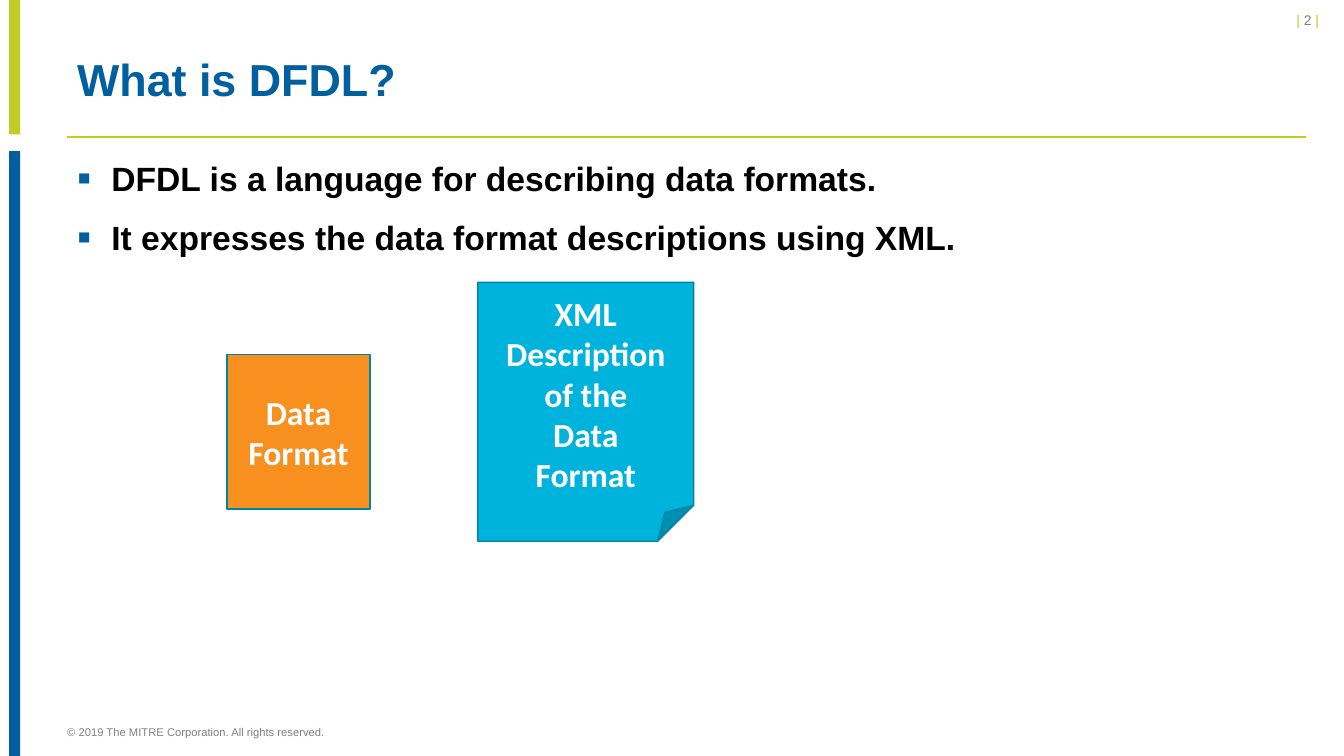
import pptx
import pptx.dml.color
import pptx.enum.shapes
import pptx.enum.text
import pptx.oxml
import pptx.oxml.ns
import pptx.util

RGBColor = pptx.dml.color.RGBColor
Pt = pptx.util.Pt
PP_ALIGN = pptx.enum.text.PP_ALIGN
MIDDLE = pptx.enum.text.MSO_ANCHOR.MIDDLE
SHAPES = pptx.enum.shapes.MSO_SHAPE

LIME = RGBColor(0xC1, 0xCD, 0x23)
BLUE = RGBColor(0x00, 0x5F, 0x9E)
GRAY = RGBColor(0x80, 0x80, 0x80)
BLACK = RGBColor(0x00, 0x00, 0x00)
WHITE = RGBColor(0xFF, 0xFF, 0xFF)
ORANGE = RGBColor(0xF7, 0x90, 0x1E)
CYAN = RGBColor(0x00, 0xB3, 0xDC)
TEAL = RGBColor(0x00, 0x84, 0xA3)

deck = pptx.Presentation()
deck.slide_width = pptx.util.Inches(13.33)
deck.slide_height = pptx.util.Inches(7.5)
slide = deck.slides.add_slide(deck.slide_layouts[6])

# The slide is a grid of 80 columns by 45 rows of square cells
CELL = deck.slide_height / 45
MARGIN, CONTENT_WIDTH = 4, 73.74


def grid(*cells):
    """Turn counts of grid cells into lengths."""
    return [pptx.util.Emu(round(count * CELL)) for count in cells]


def write(frame, paragraphs, paragraph_format, font_format, frame_format):
    """Fill a frame with paragraphs, each a list of (text, colour) runs."""
    for key, value in {"word_wrap": True, **frame_format}.items():
        setattr(frame, key, value)
    for index, runs in enumerate(paragraphs):
        paragraph = frame.add_paragraph() if index else frame.paragraphs[0]
        for key, value in paragraph_format.items():
            setattr(paragraph, key, value)
        for text, color in runs:
            run = paragraph.add_run()
            run.text = text
            run.font.color.rgb = color
            for key, value in font_format.items():
                setattr(run.font, key, value)


# Side bars and the rule under the title
for top, height, color in [(0, 8, LIME), (9, 36, BLUE)]:
    side_bar = slide.shapes.add_shape(SHAPES.RECTANGLE, *grid(0.54, top, 0.66, height))
    side_bar.shadow.inherit = False
    side_bar.fill.solid()
    side_bar.fill.fore_color.rgb = color
    side_bar.line.fill.background()

title_rule = slide.shapes.add_connector(
    pptx.enum.shapes.MSO_CONNECTOR.STRAIGHT,
    *grid(MARGIN, 8.16, MARGIN + CONTENT_WIDTH, 8.16))
title_rule.line.color.rgb = LIME
title_rule.line.width = Pt(1)
title_rule._element.spPr.append(pptx.oxml.parse_xml(
    f"<a:effectLst {pptx.oxml.ns.nsdecls('a')}/>"))

# Page number, title, statements and copyright line
NO_INSETS = dict.fromkeys(
    ["margin_left", "margin_top", "margin_right", "margin_bottom"], 0)
statements = ["DFDL is a language for describing data formats.",
              "It expresses the data format descriptions using XML."]
texts = [
    ((65.28, 0.42, 14.04, 1.62), [[("| ", LIME), ("2 ", GRAY), ("| ", LIME)]],
     {"alignment": PP_ALIGN.RIGHT, "space_after": Pt(6)},
     {"size": Pt(10)}, {}),
    ((MARGIN, 2.4, CONTENT_WIDTH, 4.92), [[("What is DFDL?", BLUE)]],
     {"line_spacing": 0.9},
     {"size": Pt(32), "bold": True}, {"vertical_anchor": MIDDLE}),
    ((MARGIN, 9, CONTENT_WIDTH, 6.18), [[(line, BLACK)] for line in statements],
     {"line_spacing": Pt(30), "space_after": Pt(12)},
     {"size": Pt(24), "bold": True}, {}),
    ((MARGIN, 42.78, 49.44, 1.56),
     [[("© 2019 The MITRE Corporation. All rights reserved.", GRAY)]],
     {}, {"size": Pt(8)}, {"vertical_anchor": MIDDLE, **NO_INSETS}),
]
for place, paragraphs, paragraph_format, font_format, frame_format in texts:
    frame = slide.shapes.add_textbox(*grid(*place)).text_frame
    write(frame, paragraphs, paragraph_format,
          {"name": "Arial", **font_format}, frame_format)
    if len(paragraphs) == len(statements):
        statement_frame = frame

# Square bullets with a hanging indent
indent = pptx.util.Inches(0.34)
for paragraph in statement_frame.paragraphs:
    properties = paragraph._p.get_or_add_pPr()
    properties.set("marL", str(indent))
    properties.set("indent", str(-indent))
    for bullet_part in [f'<a:buClr {{}}><a:srgbClr val="{BLUE}"/></a:buClr>',
                        '<a:buSzPct {} val="120000"/>',
                        '<a:buFont {} typeface="Arial"/>',
                        '<a:buChar {} char="▪"/>']:
        properties.append(pptx.oxml.parse_xml(
            bullet_part.format(pptx.oxml.ns.nsdecls("a"))))

# The data format and its description
cards = [
    (SHAPES.RECTANGLE, (13.5, 21.12, 8.52, 9.18), ORANGE, ["Data", "Format"]),
    (SHAPES.FOLDED_CORNER, (28.44, 16.8, 12.84, 15.42), CYAN,
     ["XML Description", "of the", "Data", "Format"]),
]
for outline, place, color, lines in cards:
    card = slide.shapes.add_shape(outline, *grid(*place))
    card.shadow.inherit = False
    card.fill.solid()
    card.fill.fore_color.rgb = color
    card.line.color.rgb = TEAL
    card.line.width = Pt(1)
    write(card.text_frame, [[(line, WHITE)] for line in lines],
          {"alignment": PP_ALIGN.CENTER},
          {"name": "Calibri", "size": Pt(24), "bold": True},
          {"vertical_anchor": MIDDLE})

deck.save("out.pptx")
